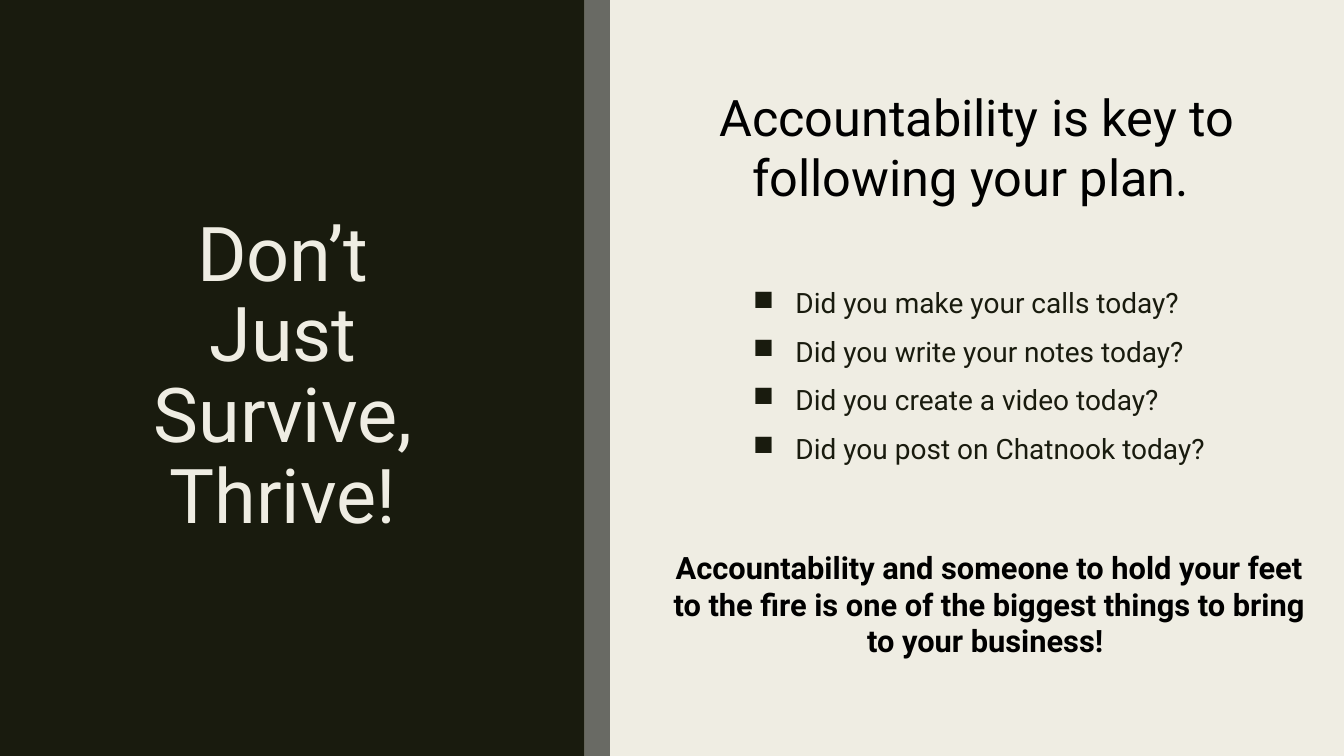
from pptx import Presentation
from pptx.dml.color import RGBColor
from pptx.enum.shapes import MSO_SHAPE
from pptx.enum.text import MSO_ANCHOR, MSO_AUTO_SIZE, PP_ALIGN
from pptx.oxml.ns import qn
from pptx.util import Inches, Pt
from lxml import etree

RECT = MSO_SHAPE.RECTANGLE
TOP, MIDDLE = MSO_ANCHOR.TOP, MSO_ANCHOR.MIDDLE
LEFT, CENTER = PP_ALIGN.LEFT, PP_ALIGN.CENTER
NO_AUTOFIT = MSO_AUTO_SIZE.NONE

CREAM = RGBColor(0xEF, 0xED, 0xE3)
DARK = RGBColor(0x19, 0x1B, 0x0E)
GRAY = RGBColor(0x69, 0x6A, 0x64)
BLACK = RGBColor(0, 0, 0)

FONT = "Roboto"
TITLE_LINES = ["Don’t ", "Just ", "Survive, ", "Thrive! "]
QUESTIONS = [
    "Did you make your calls today?",
    "Did you write your notes today?",
    "Did you create a video today?",
    "Did you post on Chatnook today?",
]
HEADLINE = "Accountability is key to following your plan. "
CLOSING = ("Accountability and someone to hold your feet to the fire "
           "is one of the biggest things to bring to your business! ")


def add_panel(s, left, width, color):
    sp = s.shapes.add_shape(RECT, Inches(left), 0, Inches(width), Inches(7.5))
    sp.shadow.inherit = False
    sp.fill.solid()
    sp.fill.fore_color.rgb = color
    sp.line.fill.background()


def add_bullet(p):
    pPr = p._p.get_or_add_pPr()
    pPr.set("marL", str(Inches(0.42)))
    pPr.set("indent", str(-Inches(0.42)))
    etree.SubElement(pPr, qn("a:buChar")).set("char", "■")


def write_text(p, lines, *, size, color, bold=False, align=LEFT,
               spacing=1.0, before=0, after=0):
    p.alignment = align
    p.line_spacing = spacing
    p.space_before, p.space_after = Pt(before), Pt(after)
    for i, line in enumerate(lines):
        if i:
            p.add_line_break()
        r = p.add_run()
        r.text = line
        r.font.name = FONT
        r.font.size = Pt(size)
        r.font.bold = bold
        r.font.color.rgb = color


def set_frame(sp, anchor):
    tf = sp.text_frame
    tf.word_wrap = True
    tf.auto_size = NO_AUTOFIT
    tf.vertical_anchor = anchor
    return tf


def add_frame(s, left, top, width, height, anchor=TOP):
    sp = s.shapes.add_textbox(Inches(left), Inches(top),
                              Inches(width), Inches(height))
    return set_frame(sp, anchor)


def place_title(s):
    title = s.shapes.title
    title.left, title.top = Inches(0.7), Inches(0.87)
    title.width, title.height = Inches(4.4), Inches(5.76)
    s.shapes._spTree.append(title._element)
    tf = set_frame(title, MIDDLE)
    write_text(tf.paragraphs[0], TITLE_LINES, size=54, color=CREAM,
               align=CENTER, spacing=0.89)


def add_questions(s):
    tf = add_frame(s, 7.37, 2.55, 5.35, 2.38, MIDDLE)
    for i, question in enumerate(QUESTIONS):
        p = tf.add_paragraph() if i else tf.paragraphs[0]
        write_text(p, [question], size=20, color=DARK,
                   spacing=0.94, before=10, after=2)
        add_bullet(p)


def main():
    prs = Presentation()
    prs.slide_width, prs.slide_height = Inches(13.33), Inches(7.5)
    s = prs.slides.add_slide(prs.slide_layouts[5])
    s.background.fill.solid()
    s.background.fill.fore_color.rgb = CREAM

    add_panel(s, 0, 5.8, DARK)
    add_panel(s, 5.8, 0.25, GRAY)
    place_title(s)
    add_questions(s)
    tf = add_frame(s, 6.5, 0.8, 6.38, 1.31)
    write_text(tf.paragraphs[0], [HEADLINE], size=36, color=BLACK, align=CENTER)
    tf = add_frame(s, 6.46, 5.39, 6.7, 1.21)
    write_text(tf.paragraphs[0], [CLOSING], size=22, color=BLACK, bold=True,
               align=CENTER)
    prs.save("out.pptx")


if __name__ == "__main__":
    main()
